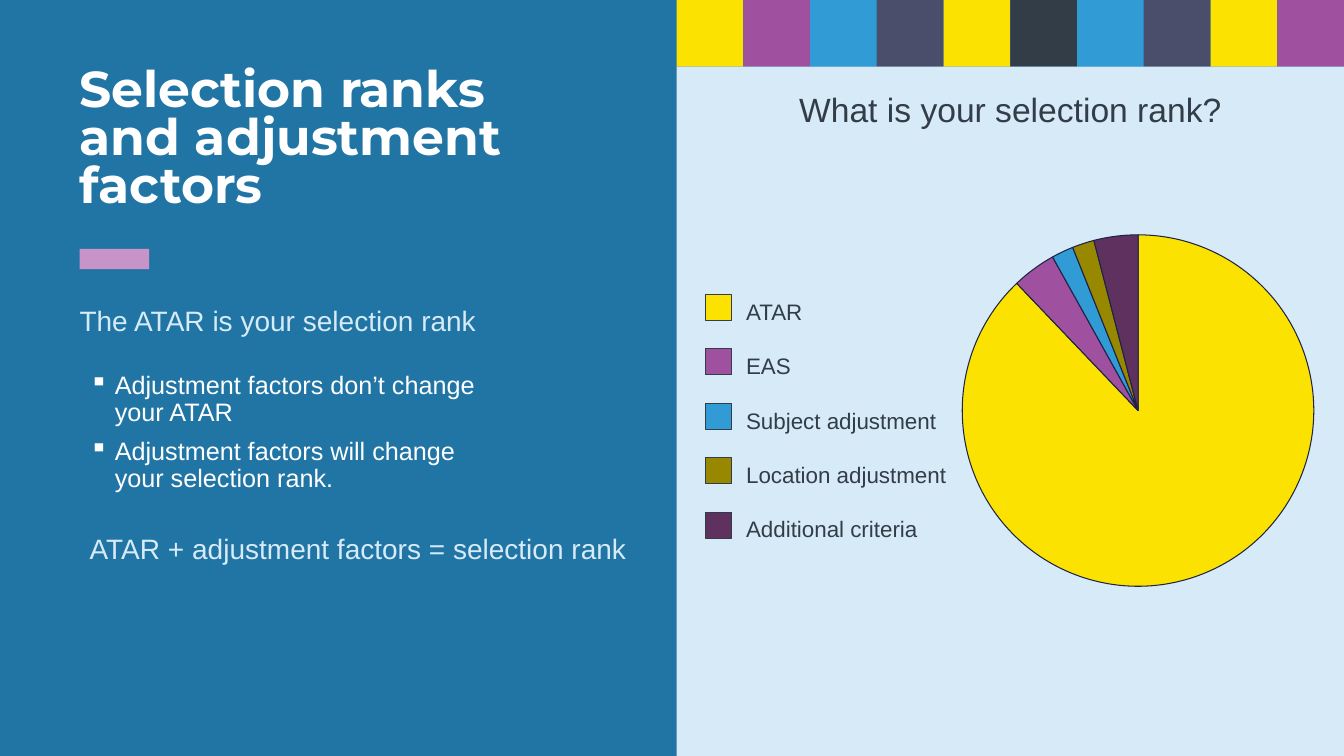
from lxml import etree
from pptx import Presentation, util as u
from pptx.chart.data import CategoryChartData
from pptx.dml.color import RGBColor
from pptx.enum import chart as charts, shapes, text
from pptx.oxml import parse_xml
from pptx.oxml.ns import nsdecls, qn

BLUE = RGBColor(0x21, 0x75, 0xA5)
PALE = RGBColor(0xD6, 0xEB, 0xF7)
WHITE = RGBColor(0xFF, 0xFF, 0xFF)
YELLOW = RGBColor(0xFB, 0xE2, 0x00)
PURPLE = RGBColor(0x9F, 0x51, 0x9F)
SKY = RGBColor(0x31, 0x9B, 0xD6)
SLATE = RGBColor(0x4B, 0x4E, 0x6A)
DARK = RGBColor(0x33, 0x3D, 0x47)
LILAC = RGBColor(0xC8, 0x94, 0xC8)
OLIVE = RGBColor(0x97, 0x88, 0x00)
PLUM = RGBColor(0x5F, 0x31, 0x5F)
NAVY = RGBColor(0x1E, 0x22, 0x45)

WIDTH, HEIGHT = 13.33, 7.5
PANEL_LEFT = 6.71
STRIP = [YELLOW, PURPLE, SKY, SLATE, YELLOW, DARK, SKY, SLATE, YELLOW, PURPLE]
FACTORS = [
    ("ATAR", 87, YELLOW),
    ("EAS", 4, PURPLE),
    ("Subject adjustment", 2, SKY),
    ("Location adjustment", 2, OLIVE),
    ("Additional criteria", 4, PLUM),
]


class SlideBuilder:
    def __init__(self, page, font="Arial"):
        self.page = page
        self.font = font

    def place(self, *lengths):
        return [u.Inches(length) for length in lengths]

    def fill_text(self, frame, lines, size, color, font=None, bold=False, spacing=None,
                  align=text.PP_ALIGN.LEFT):
        frame.word_wrap = True
        frame.auto_size = text.MSO_AUTO_SIZE.NONE
        for index, line in enumerate(lines):
            para = frame.add_paragraph() if index else frame.paragraphs[0]
            para.text = line
            para.alignment = align
            para.line_spacing = spacing
            para.font.name = font or self.font
            para.font.size = u.Pt(size)
            para.font.bold = bold
            para.font.color.rgb = color

    def title(self, line, left, top, width, height):
        box = self.page.shapes.title
        box.left, box.top, box.width, box.height = self.place(left, top, width, height)
        frame = box.text_frame
        frame.margin_left = 0
        frame.vertical_anchor = text.MSO_ANCHOR.BOTTOM
        self.fill_text(frame, [line], 36, WHITE, "Montserrat", True, 0.8)

    def rect(self, left, top, width, height, color, outline=None):
        shape = self.page.shapes.add_shape(
            shapes.MSO_SHAPE.RECTANGLE, *self.place(left, top, width, height))
        shape.shadow.inherit = False
        shape.fill.solid()
        shape.fill.fore_color.rgb = color
        if outline is None:
            shape.line.fill.background()
        else:
            shape.line.color.rgb = outline
            shape.line.width = u.Pt(0.75)
        return shape

    def label(self, lines, left, top, width, height, size, color, inset=True, **style):
        box = self.page.shapes.add_textbox(*self.place(left, top, width, height))
        frame = box.text_frame
        if not inset:
            frame.margin_left = frame.margin_right = 0
            frame.margin_top = frame.margin_bottom = 0
        self.fill_text(frame, lines, size, color, **style)
        return frame

    def bullets(self, lines, left, top, width, height):
        frame = self.label(lines, left, top, width, height, 18, WHITE, spacing=0.9)
        for para in frame.paragraphs:
            para.space_before = para.space_after = u.Pt(4)
            props = para._p.get_or_add_pPr()
            props.set("marL", str(u.Inches(0.25)))
            props.set("indent", str(-u.Inches(0.25)))
            bullet = parse_xml(f'<a:buChar {nsdecls("a")} char="▪"/>')
            props.insert_element_before(bullet, "a:tabLst", "a:defRPr", "a:extLst")

    def pie(self, values, colors, left, top, width, height, layout):
        data = CategoryChartData()
        data.categories = [str(number + 1) for number in range(len(values))]
        data.add_series("Series 1", values)
        chart = self.page.shapes.add_chart(
            charts.XL_CHART_TYPE.PIE, *self.place(left, top, width, height), data).chart
        chart.has_legend = chart.has_title = False
        chart.font.name = self.font
        chart.font.size = u.Pt(10)
        chart.font.color.rgb = NAVY
        plot = chart.plots[0]
        plot.vary_by_categories = True
        for index, color in enumerate(colors):
            wedge = plot.series[0].points[index].format
            wedge.fill.solid()
            wedge.fill.fore_color.rgb = color
            wedge.line.color.rgb = NAVY
            wedge.line.width = u.Pt(0.75)
        # Fixed inner plot area
        area = chart._chartSpace.chart.plotArea
        for old in area.findall(qn("c:layout")):
            area.remove(old)
        holder = parse_xml(f'<c:layout {nsdecls("c")}><c:manualLayout/></c:layout>')
        settings = [("layoutTarget", "inner"), ("xMode", "edge"), ("yMode", "edge")]
        settings += zip("xywh", layout)
        for tag, value in settings:
            etree.SubElement(holder[0], qn(f"c:{tag}")).set("val", str(value))
        area.insert(0, holder)


def main():
    deck = Presentation()
    deck.slide_width, deck.slide_height = u.Inches(WIDTH), u.Inches(HEIGHT)
    page = deck.slides.add_slide(deck.slide_layouts[5])
    page.background.fill.solid()
    page.background.fill.fore_color.rgb = BLUE
    build = SlideBuilder(page)

    # Colour strip
    tile = (WIDTH - PANEL_LEFT) / len(STRIP)
    for index, color in enumerate(STRIP):
        build.rect(PANEL_LEFT + index * tile, 0, tile, tile, color)

    # Left side: title and explanation
    build.rect(0.79, 2.47, 0.69, 0.2, LILAC)
    build.title("Selection ranks and adjustment factors", 0.79, 0.6, 5, 1.57)
    build.label(["The ATAR is your selection rank"], 0.69, 2.96, 5.19, 0.44, 20, PALE)
    build.bullets(["Adjustment factors don’t change your ATAR",
                   "Adjustment factors will change your selection rank."],
                  0.79, 3.65, 4.23, 1.88)
    build.label(["ATAR + adjustment factors = selection rank"],
                0.79, 5.22, 5.56, 0.44, 20, PALE)

    # Right panel with its heading
    panel = build.rect(PANEL_LEFT, tile, WIDTH - PANEL_LEFT, HEIGHT - tile, PALE).text_frame
    panel.margin_top = panel.margin_bottom = u.Inches(0.2)
    panel.vertical_anchor = text.MSO_ANCHOR.TOP
    build.fill_text(panel, ["What is your selection rank?"], 24, DARK,
                    spacing=u.Pt(29.9), align=text.PP_ALIGN.CENTER)

    # Legend
    for index, (name, _, color) in enumerate(FACTORS):
        top = 2.92 + index * 0.54
        build.rect(7, top, 0.26, 0.26, color, DARK)
        build.label([name], 7.4, top - 0.01, 2.15, 0.28, 16, DARK,
                    inset=False, spacing=u.Pt(22.4))

    # Pie chart
    build.pie([value for _, value, _ in FACTORS], [color for _, _, color in FACTORS],
              9.46, 2.18, 3.73, 3.75, (0.02, 0.04, 0.94, 0.93))

    deck.save("out.pptx")


if __name__ == "__main__":
    main()
